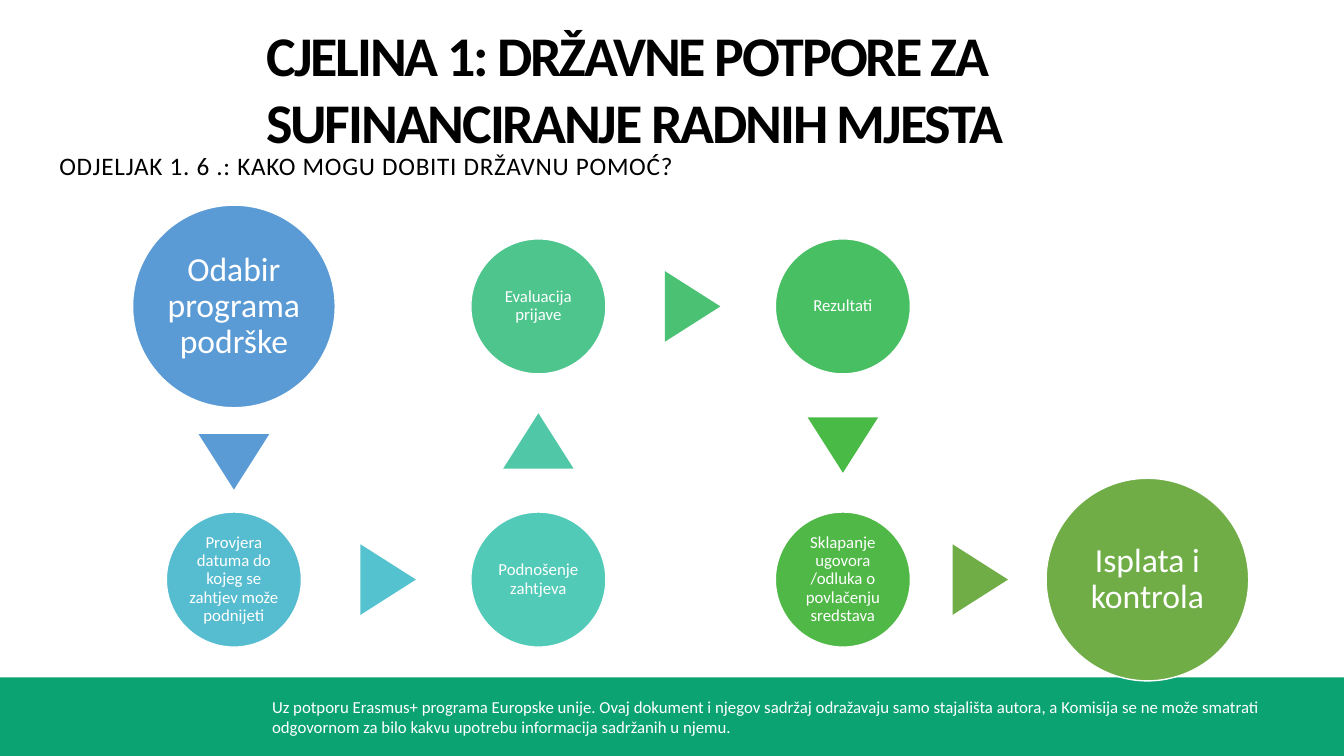
import pptx
import pptx.dml.color
import pptx.enum.shapes
import pptx.enum.text
import pptx.util

SHAPES = pptx.enum.shapes.MSO_SHAPE
ALIGN = pptx.enum.text.PP_ALIGN
ANCHOR = pptx.enum.text.MSO_ANCHOR

SLIDE_WIDTH, SLIDE_HEIGHT = 13.33, 7.5
BAND_TOP = 6.72
FIRST_COLUMN, COLUMN_STEP = 2.32, 3.02
FIRST_ROW, ROW_STEP = 3.04, 2.71
LARGE, SMALL = 2.01, 1.34
ARROW_WIDTH, ARROW_HEIGHT, ARROW_NUDGE = 0.7, 0.55, 0.02

COLORS = {
    "white": "FFFFFF", "black": "000000", "band": "0CA373",
    "choose": "5B9BD5", "check": "56BCD0", "to_apply": "55C3CF",
    "apply": "52CAB8", "to_evaluate": "50C8A7", "evaluate": "4DC58D",
    "to_results": "4BC174", "results": "49BF64", "to_contract": "4ABA46",
    "contract": "50B846", "pay": "70AD47",
}

# column, row, diameter, text size, text, circle colour, colour of the arrow to the next step
STEPS = [
    (0, 0, LARGE, 24, "Odabir programa podrške", "choose", "choose"),
    (0, 1, SMALL, 12, "Provjera datuma do kojeg se zahtjev može podnijeti", "check", "to_apply"),
    (1, 1, SMALL, 12, "Podnošenje zahtjeva", "apply", "to_evaluate"),
    (1, 0, SMALL, 12, "Evaluacija prijave", "evaluate", "to_results"),
    (2, 0, SMALL, 12, "Rezultati", "results", "to_contract"),
    (2, 1, SMALL, 12, "Sklapanje ugovora /odluka o povlačenju sredstava", "contract", "pay"),
    (3, 1, LARGE, 24, "Isplata i kontrola", "pay", None),
]
# direction (columns, rows) -> rotation of an upward triangle
ROTATIONS = {(0, -1): 0, (1, 0): 90, (0, 1): 180}


def color(name):
    return pptx.dml.color.RGBColor.from_string(COLORS[name])


def box(left, top, width, height):
    return [pptx.util.Inches(length) for length in (left, top, width, height)]


def centre(column, row):
    return FIRST_COLUMN + column * COLUMN_STEP, FIRST_ROW + row * ROW_STEP


def write(shape, text, size, color_name, bold=False, spacing=0):
    """Set one paragraph; spacing is the letter spacing in points."""
    frame = shape.text_frame
    frame.word_wrap = True
    frame.text = text
    run = frame.paragraphs[0].runs[0]
    run.font.name = "Calibri"
    run.font.size = pptx.util.Pt(size)
    run.font.bold = bold
    run.font.color.rgb = color(color_name)
    if spacing:
        run._r.get_or_add_rPr().set("spc", str(int(spacing * 100)))
    return frame


def set_margins(frame, left, top, right, bottom):
    frame.margin_left, frame.margin_top, frame.margin_right, frame.margin_bottom = box(
        left, top, right, bottom)


def add_filled(slide, kind, place, color_name):
    shape = slide.shapes.add_shape(kind, *box(*place))
    shape.shadow.inherit = False
    shape.fill.solid()
    shape.fill.fore_color.rgb = color(color_name)
    shape.line.fill.background()
    return shape


def add_text(slide, place, text, size, color_name, **style):
    return write(slide.shapes.add_textbox(*box(*place)), text, size, color_name, **style)


def add_step(slide, column, row, diameter, size, text, color_name):
    x, y = centre(column, row)
    place = (x - diameter / 2, y - diameter / 2, diameter, diameter)
    circle = add_filled(slide, SHAPES.OVAL, place, color_name)
    circle.line.color.rgb = color("white")
    circle.line.width = pptx.util.Pt(1)
    frame = write(circle, text, size, "white")
    frame.vertical_anchor = ANCHOR.MIDDLE
    margin = size / 800
    set_margins(frame, margin, margin, margin, margin)
    frame.paragraphs[0].alignment = ALIGN.CENTER
    frame.paragraphs[0].line_spacing = 0.9


def add_arrow(slide, step, following, color_name):
    """Place a triangle midway between the facing edges of two circles."""
    across, down = following[0] - step[0], following[1] - step[1]
    start, end = centre(*step[:2]), centre(*following[:2])
    shift = (step[2] - following[2]) / 4 + ARROW_NUDGE
    x = (start[0] + end[0]) / 2 + across * shift
    y = (start[1] + end[1]) / 2 + down * shift
    place = (x - ARROW_WIDTH / 2, y - ARROW_HEIGHT / 2, ARROW_WIDTH, ARROW_HEIGHT)
    arrow = add_filled(slide, SHAPES.ISOSCELES_TRIANGLE, place, color_name)
    arrow.rotation = ROTATIONS[across, down]


def main():
    presentation = pptx.Presentation()
    presentation.slide_width = pptx.util.Inches(SLIDE_WIDTH)
    presentation.slide_height = pptx.util.Inches(SLIDE_HEIGHT)
    slide = presentation.slides.add_slide(presentation.slide_layouts[6])

    add_filled(slide, SHAPES.RECTANGLE,
               (0, BAND_TOP, SLIDE_WIDTH, SLIDE_HEIGHT - BAND_TOP), "band")
    add_text(slide, (2.6, 6.86, 10.42, 0.5),
             "Uz potporu Erasmus+ programa Europske unije. Ovaj dokument i njegov sadržaj "
             "odražavaju samo stajališta autora, a Komisija se ne može smatrati odgovornom "
             "za bilo kakvu upotrebu informacija sadržanih u njemu.", 12, "white")

    for step, following in zip(STEPS, STEPS[1:] + [None]):
        add_step(slide, *step[:6])
        if following:
            add_arrow(slide, step, following, step[6])

    title = add_text(slide, (2.64, 0.19, 8.98, 0.69),
                     "CJELINA 1: DRŽAVNE POTPORE ZA SUFINANCIRANJE RADNIH MJESTA",
                     40, "black", bold=True, spacing=-1.5)
    set_margins(title, 0, 0.01, 0, 0)
    add_text(slide, (0.49, 1.44, 6.66, 0.4),
             "ODJELJAK 1. 6 .: KAKO MOGU DOBITI DRŽAVNU POMOĆ?", 18, "black", spacing=0.5)

    presentation.save("out.pptx")


if __name__ == "__main__":
    main()
